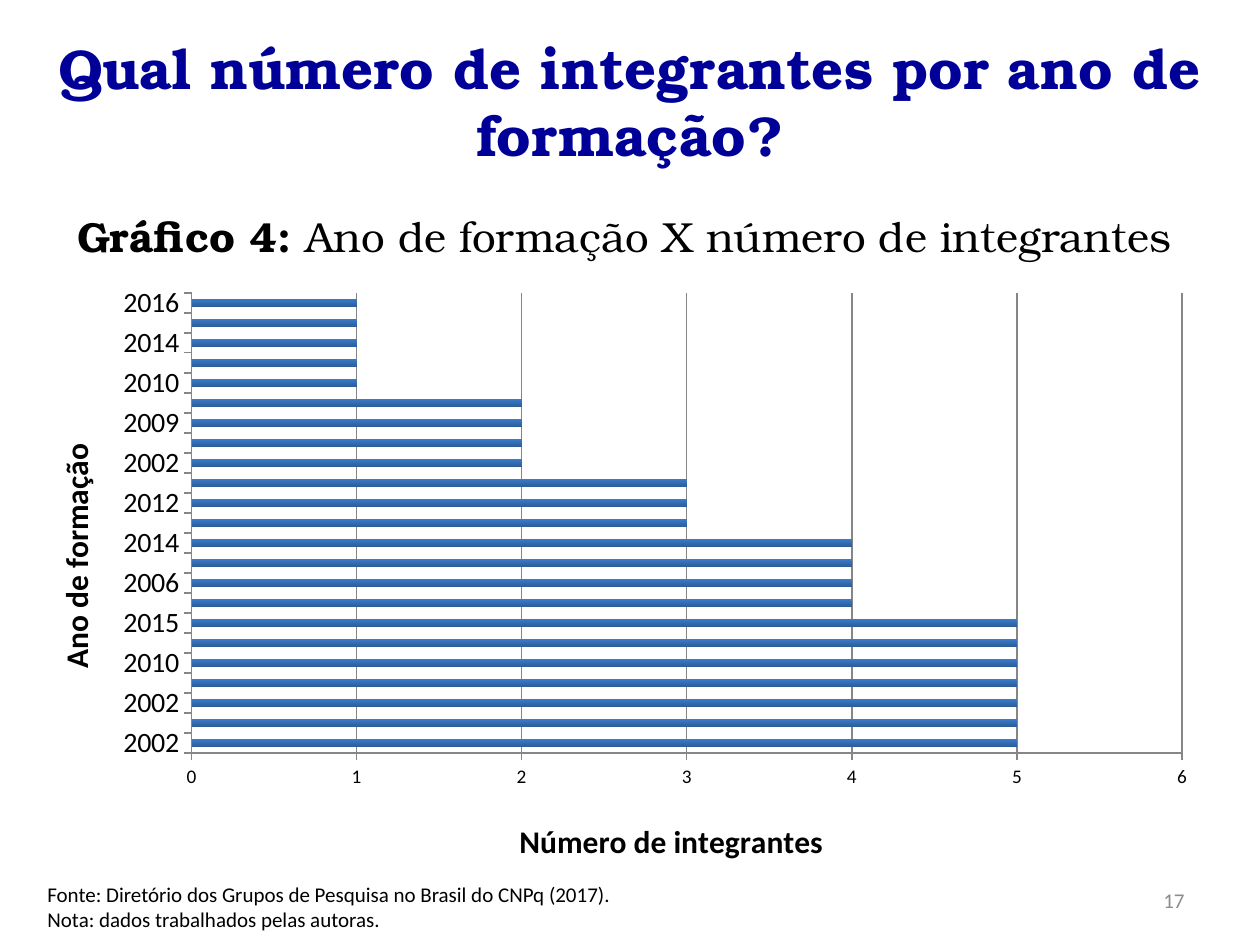
import pptx
import pptx.chart.data
import pptx.dml.color
import pptx.enum.chart
import pptx.enum.text
import pptx.oxml
import pptx.oxml.ns
import pptx.util

Pt = pptx.util.Pt
qn = pptx.oxml.ns.qn
Align = pptx.enum.text.PP_ALIGN
Anchor = pptx.enum.text.MSO_ANCHOR
SERIF = "TeX Gyre Bonum"
SANS = "Calibri"


def style(font, size, color="000000", name=SANS, bold=False):
    font.size = Pt(size)
    font.name = name
    font.bold = bold
    font.color.rgb = pptx.dml.color.RGBColor.from_string(color)


def place(part, **spots):
    """Give a chart part a manual layout, in fractions of the chart."""
    for old in part.findall(qn("c:layout")):
        part.remove(old)
    modes = '<c:xMode val="edge"/><c:yMode val="edge"/>'
    if "w" in spots:
        modes = '<c:layoutTarget val="inner"/>' + modes
    sizes = "".join(f'<c:{key} val="{val}"/>' for key, val in spots.items())
    node = pptx.oxml.parse_xml(
        f'<c:layout {pptx.oxml.ns.nsdecls("c")}><c:manualLayout>'
        f"{modes}{sizes}</c:manualLayout></c:layout>")
    part.insert(0 if part.find(qn("c:tx")) is None else 1, node)


deck = pptx.Presentation()
deck.slide_width, deck.slide_height = Pt(720), Pt(540)
slide = deck.slides.add_slide(deck.slide_layouts[5])

# Title
title = slide.shapes.title
title.left, title.top, title.width, title.height = Pt(0), Pt(15), Pt(720), Pt(85)
title.text_frame.word_wrap = True
title.text_frame.vertical_anchor = Anchor.MIDDLE
para = title.text_frame.paragraphs[0]
para.alignment = Align.CENTER
run = para.add_run()
run.text = "Qual número de integrantes por ano de formação?"
style(run.font, 32, "000099", SERIF, True)

# Caption, source and page number: box, alignment, anchor, lines of runs
notes = [
    ((37, 117, 663, 36), Align.LEFT, Anchor.TOP, [
        [("Gráfico 4:", 24, "000000", SERIF, True),
         (" Ano de formação X número de integrantes", 24, "000000", SERIF)]]),
    ((20, 500, 700, 36), Align.LEFT, Anchor.TOP, [
        [("Fonte: Diretório dos Grupos de Pesquisa no Brasil do CNPq (2017).", 12)],
        [("Nota: dados trabalhados pelas autoras.", 12)]]),
    ((516, 500, 168, 29), Align.RIGHT, Anchor.MIDDLE, [[("17", 12, "8C8C8C")]]),
]
for box, align, anchor, lines in notes:
    frame = slide.shapes.add_textbox(*map(Pt, box)).text_frame
    frame.word_wrap = True
    frame.vertical_anchor = anchor
    para = frame.paragraphs[0]
    para.alignment = align
    for row, line in enumerate(lines):
        if row:
            para.add_line_break()
        for text, *look in line:
            run = para.add_run()
            run.text = text
            style(run.font, *look)

# Chart: years of formation, grouped by number of members
groups = {
    5: [2002, 2002, 2002, 2004, 2010, 2011, 2015],
    4: [2006, 2006, 2008, 2014],
    3: [2010, 2012, 2016],
    2: [2002, 2008, 2009, 2011],
    1: [2010, 2011, 2014, 2015, 2016],
}
data = pptx.chart.data.CategoryChartData()
data.categories = [str(year) for years in groups.values() for year in years]
data.add_series("Series 1", [num for num, years in groups.items() for year in years])
chart = slide.shapes.add_chart(
    pptx.enum.chart.XL_CHART_TYPE.BAR_CLUSTERED,
    Pt(14), Pt(157), Pt(682), Pt(346), data).chart
chart.has_legend = False
chart.has_title = False
style(chart.font, 11)
place(chart.plots[0]._element.getparent(), x=0.14, y=0.03, w=0.83, h=0.76)

plot = chart.plots[0]
plot.gap_width = 150
plot.vary_by_categories = False
fill = plot.series[0].format.fill
fill.gradient()
fill.gradient_angle = 270
for stop, color in zip(fill.gradient_stops, ("3A7CCB", "2C5D98")):
    stop.color.rgb = pptx.dml.color.RGBColor.from_string(color)

years, count = chart.category_axis, chart.value_axis
axes = [(years, "Ano de formação", 16, 0.02, 0.27),
        (count, "Número de integrantes", 11, 0.41, 0.89)]
gray = pptx.dml.color.RGBColor.from_string("868686")
for axis, text, size, left, top in axes:
    style(axis.tick_labels.font, size)
    axis.major_tick_mark = pptx.enum.chart.XL_TICK_MARK.OUTSIDE
    axis.minor_tick_mark = pptx.enum.chart.XL_TICK_MARK.NONE
    axis.format.line.color.rgb = gray
    axis.format.line.width = Pt(0.75)
    run = axis.axis_title.text_frame.paragraphs[0].add_run()
    run.text = text
    style(run.font, 18, bold=True)
    place(axis.axis_title._element, x=left, y=top)

years.has_major_gridlines = False
skip = pptx.oxml.parse_xml(
    f'<c:tickLblSkip {pptx.oxml.ns.nsdecls("c")} val="2"/>')
years._element.find(qn("c:noMultiLvlLbl")).addprevious(skip)
count.minimum_scale, count.maximum_scale, count.major_unit = 0, 6, 1
count.tick_labels.number_format = "General"
count.tick_labels.number_format_is_linked = False
count.has_major_gridlines = True
count.major_gridlines.format.line.color.rgb = gray
count.major_gridlines.format.line.width = Pt(0.75)

deck.save("out.pptx")
